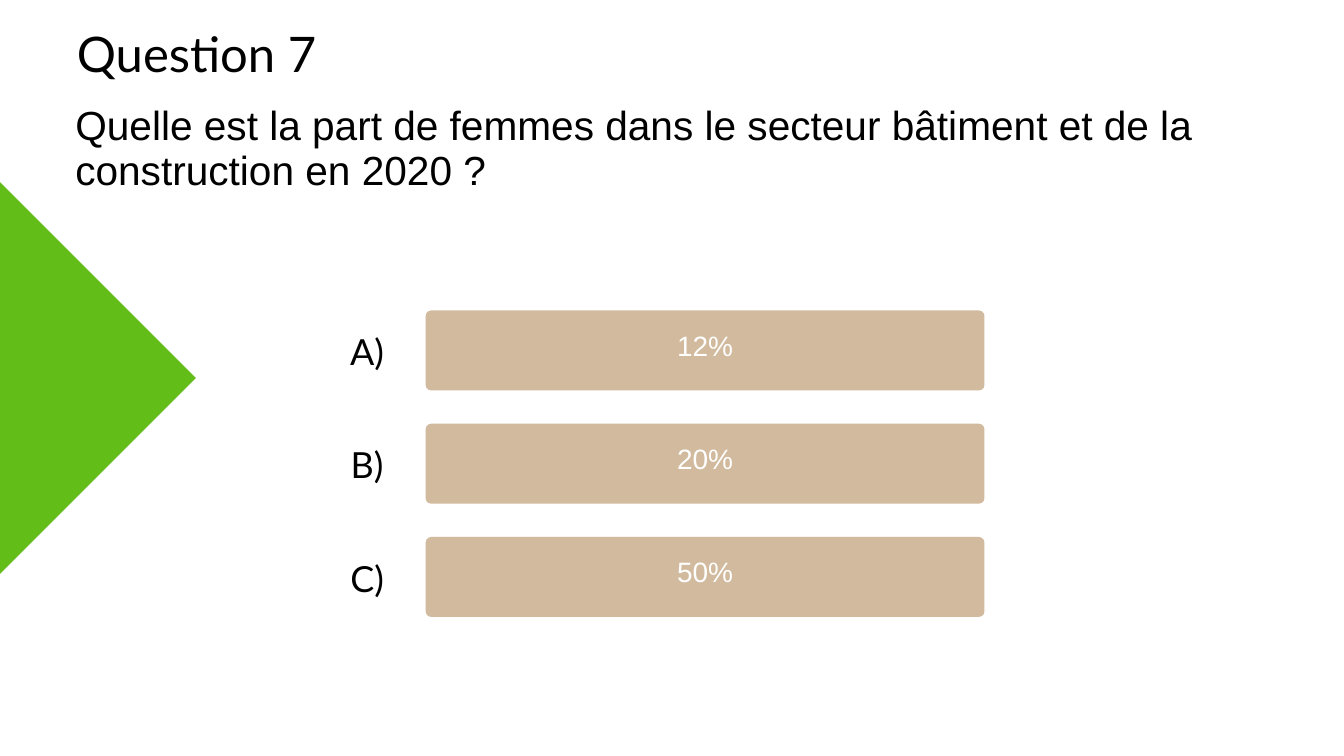
from pptx import Presentation
from pptx.dml.color import RGBColor
from pptx.enum.shapes import MSO_SHAPE as Shape
from pptx.enum.text import PP_ALIGN as Align
from pptx.util import Inches, Pt

WIDTH, HEIGHT = 20, 11.25
BLACK = RGBColor(0x00, 0x00, 0x00)
WHITE = RGBColor(0xFF, 0xFF, 0xFF)
GREEN = RGBColor(0x62, 0xBD, 0x19)
SAND = RGBColor(0xD1, 0xBA, 0x9D)

TITLE = "Question 7"
QUESTION = ("Quelle est la part de femmes dans le secteur bâtiment "
            "et de la construction en 2020 ?")
ANSWERS = [("A)", "12%"), ("B)", "20%"), ("C)", "50%")]


def add_text(slide, box, text, font, size, spacing, color, align, wrap=True):
    frame = slide.shapes.add_textbox(*map(Inches, box)).text_frame
    frame.margin_left = frame.margin_right = 0
    frame.margin_top = frame.margin_bottom = 0
    frame.word_wrap = wrap
    frame.text = text
    paragraph = frame.paragraphs[0]
    paragraph.alignment = align
    paragraph.line_spacing = Pt(spacing)
    style = paragraph.runs[0].font
    style.name, style.size = font, Pt(size)
    style.color.rgb = color


def add_block(slide, kind, box, color):
    block = slide.shapes.add_shape(kind, *map(Inches, box))
    block.shadow.inherit = False
    block.fill.solid()
    block.fill.fore_color.rgb = color
    block.line.fill.background()
    return block


def add_edge_diamond(slide, size):
    """Diamond centred on the left edge of the slide."""
    box = (-size / 2, (HEIGHT - size) / 2, size, size)
    add_block(slide, Shape.DIAMOND, box, GREEN)


def add_heading(slide, left, top, width):
    add_text(slide, (left, top, 3.61, 1.09), TITLE,
             "Lato", 52.5, 73.5, BLACK, Align.CENTER, wrap=False)
    add_text(slide, (left, top + 1.36, width, 1.42), QUESTION,
             "Arial", 43.5, 47.4, BLACK, Align.LEFT)


def add_answers(slide, left, top, width, height):
    """Stack of lettered answer bars; gaps are a fixed share of the pitch."""
    label_width = 0.16 * width
    bar_left, bar_width = left + label_width, width - label_width
    bar_height = 1.19
    pitch = (height - bar_height) / (len(ANSWERS) - 1)
    for row, (letter, share) in enumerate(ANSWERS):
        y = top + row * pitch
        bar = add_block(slide, Shape.ROUNDED_RECTANGLE,
                        (bar_left, y, bar_width, bar_height), SAND)
        bar.adjustments[0] = 0.07
        add_text(slide, (bar_left, y + 0.31, bar_width, 0.52), share,
                 "Arial", 30, 32.7, WHITE, Align.CENTER)
        add_text(slide, (left, y + 0.18, 0.9 * label_width, 0.8), letter,
                 "Lato", 38.5, 53.9, BLACK, Align.CENTER)


def main():
    prs = Presentation()
    prs.slide_width, prs.slide_height = Inches(WIDTH), Inches(HEIGHT)
    slide = prs.slides.add_slide(prs.slide_layouts[6])

    add_edge_diamond(slide, 5.83)
    add_heading(slide, left=1.12, top=0.2, width=18.28)
    # Bars span 6.33 to 14.65 with the letters in the column before them
    add_answers(slide, left=4.75, top=4.62, width=9.9, height=4.56)

    prs.save("out.pptx")


if __name__ == "__main__":
    main()
